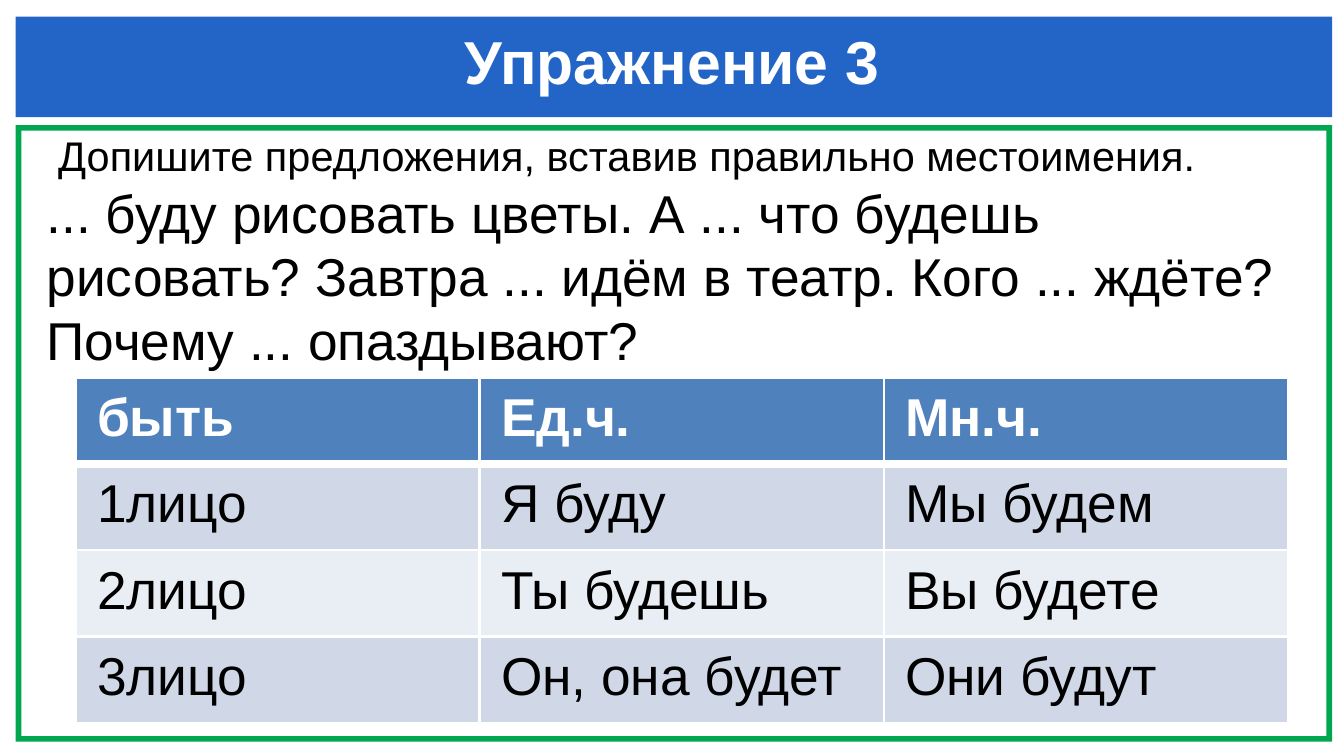
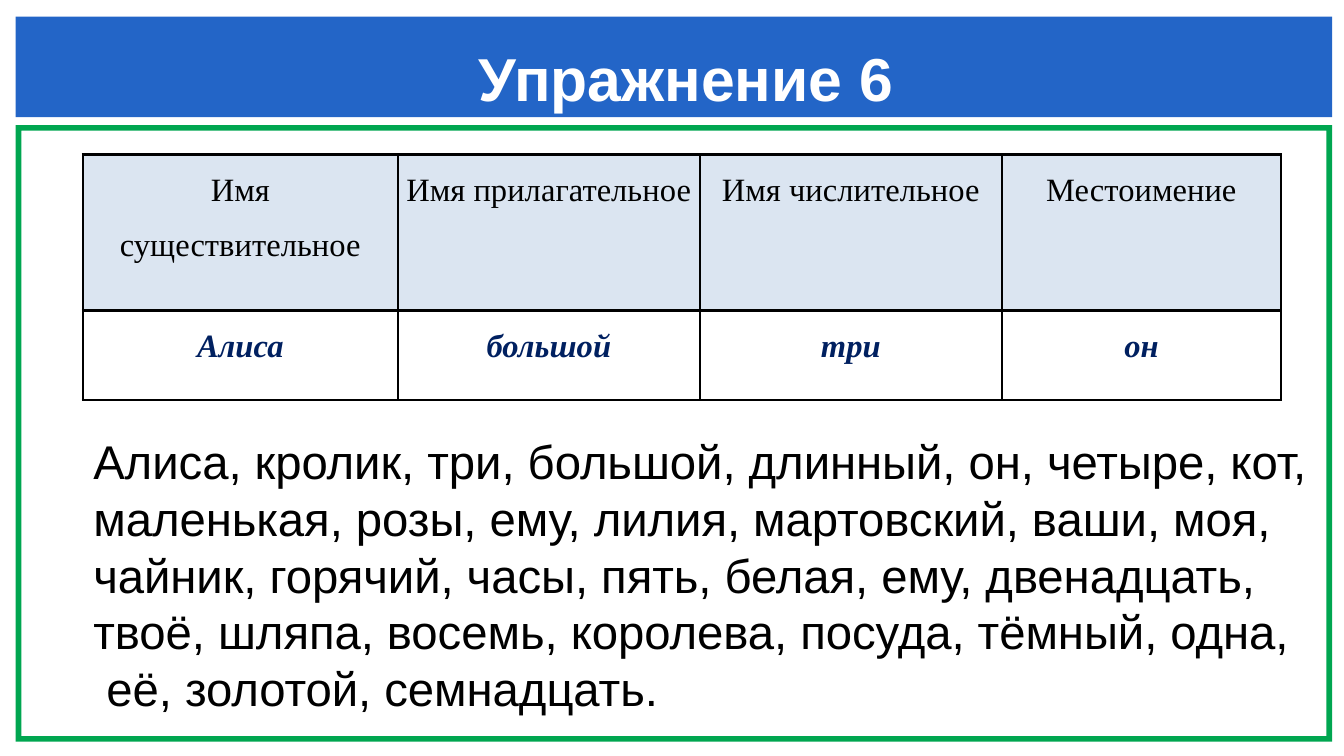
from dataclasses import dataclass

from lxml import etree
from pptx import Presentation
from pptx.dml.color import RGBColor
from pptx.enum import shapes, text
from pptx.oxml import ns
from pptx.util import Pt

COLORS = {
    "band": "2365C7", "frame": "00A650", "white": "FFFFFF", "black": "000000",
    "header": "4F81BD", "odd": "D0D8E8", "even": "E9EDF4",
    "pale": "DBE5F1", "navy": "002060",
}


@dataclass(frozen=True)
class Box:
    left: float
    top: float
    width: float
    height: float

    def lengths(self) -> tuple:
        return Pt(self.left), Pt(self.top), Pt(self.width), Pt(self.height)


@dataclass(frozen=True)
class Style:
    size: float
    color: str = "black"
    name: str = "Arial"
    bold: bool = False
    italic: bool = False
    align: text.PP_ALIGN = text.PP_ALIGN.LEFT
    spacing: float = 1.0


@dataclass(frozen=True)
class RowStyle:
    height: float
    style: Style
    fill: str | None = None


@dataclass(frozen=True)
class Grid:
    left: float
    top: float
    widths: list[float]
    rows: list[RowStyle]
    border: str
    header_line: float = 1
    margins: tuple[float, float] = (7.2, 3.6)


BAND = Box(5.3, 5.6, 445, 34)
FRAME = Box(5.3, 42.3, 445, 208.5)
FRAME_LINE = 1.9
TITLE = Style(20.5, "white", bold=True, align=text.PP_ALIGN.CENTER)


def rgb(key: str) -> RGBColor:
    return RGBColor.from_string(COLORS[key])


def style_paragraph(p, style: Style) -> None:
    p.alignment = style.align
    p.line_spacing = style.spacing
    f = p.font
    f.name, f.size = style.name, Pt(style.size)
    f.bold, f.italic = style.bold, style.italic
    f.color.rgb = rgb(style.color)


def add_block(s, kind, box: Box, color: str):
    sp = s.shapes.add_shape(kind, *box.lengths())
    sp.shadow.inherit = False
    sp.fill.solid()
    sp.fill.fore_color.rgb = rgb(color)
    sp.line.fill.background()
    return sp


def add_text(s, box: Box, lines: list[tuple[str, Style]],
             margins: tuple[float, float] = (0, 0)) -> None:
    tf = s.shapes.add_textbox(*box.lengths()).text_frame
    tf.word_wrap = True
    tf.margin_left = tf.margin_right = Pt(margins[0])
    tf.margin_top = tf.margin_bottom = Pt(margins[1])
    for i, (line, style) in enumerate(lines):
        p = tf.add_paragraph() if i else tf.paragraphs[0]
        p.text = line
        style_paragraph(p, style)


def add_exercise(prs, title: str, title_box: Box):
    s = prs.slides.add_slide(prs.slide_layouts[6])
    frame = add_block(s, shapes.MSO_SHAPE.FRAME, FRAME, "frame")
    frame.adjustments[0] = FRAME_LINE / FRAME.height
    add_block(s, shapes.MSO_SHAPE.RECTANGLE, BAND, "band")
    add_text(s, title_box, [(title, TITLE)])
    return s


def set_border(cell, side: str, color: str, width: float) -> None:
    ln = etree.SubElement(cell._tc.get_or_add_tcPr(), ns.qn(f"a:ln{side}"), w=str(Pt(width)))
    fill = etree.SubElement(ln, ns.qn("a:solidFill"))
    etree.SubElement(fill, ns.qn("a:srgbClr"), val=COLORS[color])


def add_grid(s, grid: Grid, data: list[list[str]]) -> None:
    box = Box(grid.left, grid.top, sum(grid.widths), sum(r.height for r in grid.rows))
    table = s.shapes.add_table(len(data), len(grid.widths), *box.lengths()).table
    for column, width in zip(table.columns, grid.widths):
        column.width = Pt(width)
    for i, (row, values) in enumerate(zip(grid.rows, data)):
        table.rows[i].height = Pt(row.height)
        edges = {"L": 1, "R": 1, "T": grid.header_line if i == 1 else 1,
                 "B": grid.header_line if i == 0 else 1}
        for j, value in enumerate(values):
            cell = table.cell(i, j)
            cell.margin_left = cell.margin_right = Pt(grid.margins[0])
            cell.margin_top = cell.margin_bottom = Pt(grid.margins[1])
            for side, width in edges.items():
                set_border(cell, side, grid.border, width)
            if row.fill:
                cell.fill.solid()
                cell.fill.fore_color.rgb = rgb(row.fill)
            else:
                cell.fill.background()
            p = cell.text_frame.paragraphs[0]
            p.text = value
            style_paragraph(p, row.style)


def build_pronouns(prs) -> None:
    s = add_exercise(prs, "Упражнение 3", Box(23.8, 8, 406.8, 25))
    add_text(s, Box(15.8, 44, 422.6, 104), [
        (" Допишите предложения, вставив правильно местоимения.", Style(14)),
        ("... буду рисовать цветы. А ... что будешь рисовать? Завтра ... идём в театр. "
         "Кого ... ждёте? Почему ... опаздывают?", Style(18)),
    ])
    height = 29.2
    rows = [RowStyle(height, Style(18, "white", bold=True), "header")]
    rows += [RowStyle(height, Style(18), fill) for fill in ("odd", "even", "odd")]
    add_grid(s, Grid(25.6, 127.6, [136.6] * 3, rows, "white", header_line=3), [
        ["быть", "Ед.ч.", "Мн.ч."],
        ["1лицо", "Я буду", "Мы будем"],
        ["2лицо", "Ты будешь", "Вы будете"],
        ["3лицо", "Он, она будет", "Они будут"],
    ])


def build_parts_of_speech(prs) -> None:
    s = add_exercise(prs, "Упражнение 6", Box(31, 13.7, 401.8, 25))
    serif = dict(name="Times New Roman", align=text.PP_ALIGN.CENTER, spacing=1.5)
    rows = [
        RowStyle(52.7, Style(11, **serif), "pale"),
        RowStyle(30.2, Style(11, "navy", bold=True, italic=True, **serif)),
    ]
    widths = [106.5, 102.1, 102.1, 94.4]
    add_grid(s, Grid(28, 52.3, widths, rows, "black", margins=(2.2, 0)), [
        ["Имя существительное", "Имя прилагательное", "Имя числительное", "Местоимение"],
        ["Алиса", "большой", "три", "он"],
    ])
    words = [
        "Алиса, кролик, три, большой, длинный, он, четыре, кот,",
        "маленькая, розы, ему, лилия, мартовский, ваши, моя,",
        "чайник, горячий, часы, пять, белая, ему, двенадцать,",
        "твоё, шляпа, восемь, королева, посуда, тёмный, одна,",
        " её, золотой, семнадцать.",
    ]
    add_text(s, Box(24.5, 142.6, 429.8, 108), [(w, Style(16)) for w in words], (7.2, 3.6))


def main() -> None:
    prs = Presentation()
    prs.slide_width, prs.slide_height = Pt(454.3), Pt(255.6)
    build_pronouns(prs)
    build_parts_of_speech(prs)
    prs.save("out.pptx")


if __name__ == "__main__":
    main()
